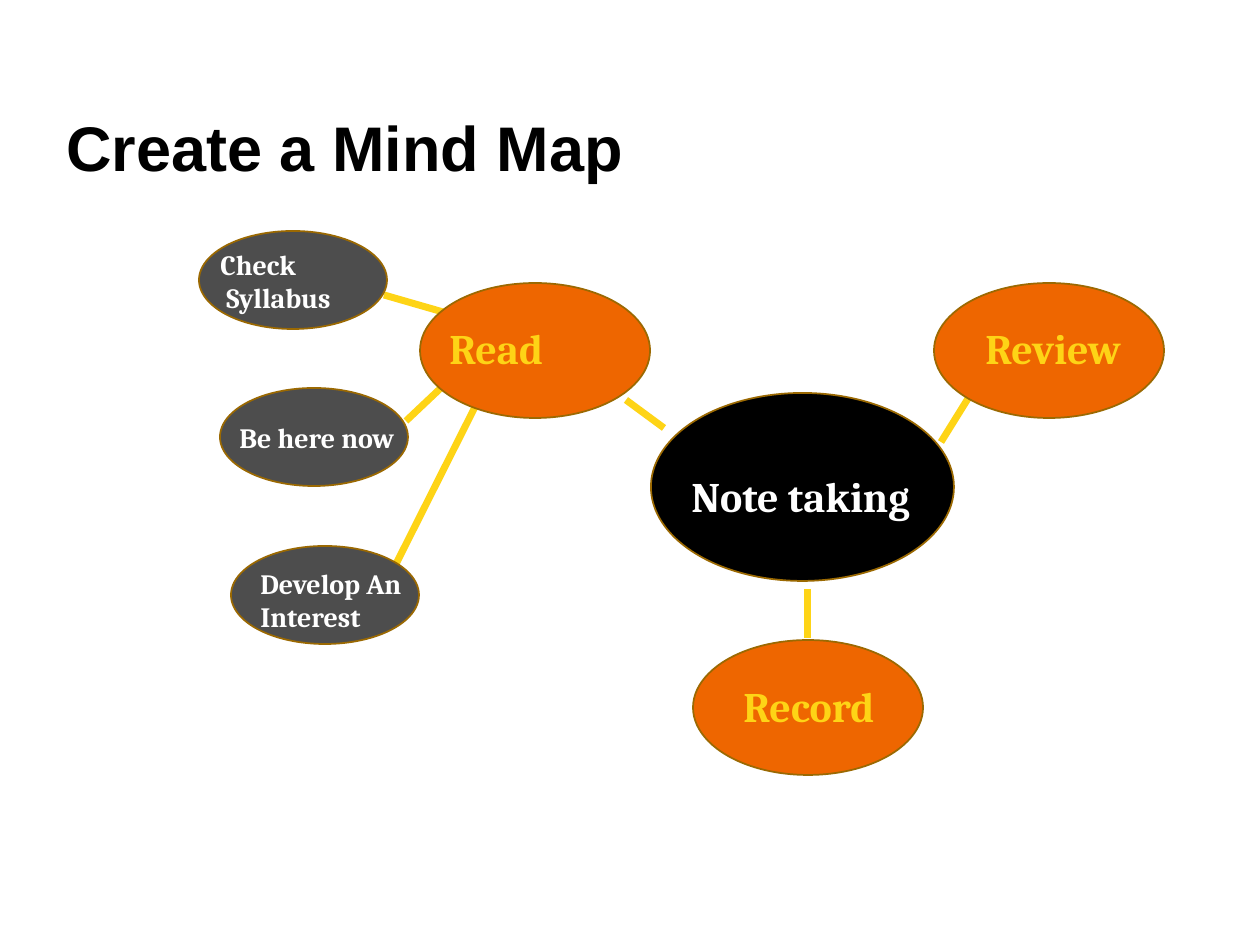
from dataclasses import dataclass

from lxml.etree import SubElement
from pptx import Presentation
from pptx.dml.color import RGBColor
from pptx.enum.shapes import MSO_CONNECTOR, MSO_SHAPE
from pptx.enum.text import MSO_ANCHOR, MSO_AUTO_SIZE
from pptx.oxml.ns import qn
from pptx.util import Emu, Pt

EMU_PER_PX = 914400 / 126
YELLOW, WHITE, BLACK = "FED416", "FFFFFF", "000000"
ORANGE, GRAY, BROWN = "EE6600", "4D4D4D", "9B6902"


@dataclass(frozen=True)
class Style:
    width: int
    height: int
    fill: str
    color: str
    size: int


@dataclass(frozen=True)
class Node:
    style: Style
    x: int
    y: int
    lines: tuple[str, ...]
    label: tuple[int, int, int, int]  # left, top, width, height


@dataclass(frozen=True)
class Link:
    x1: int
    y1: int
    x2: int
    y2: int


CENTER = Style(303, 188, BLACK, WHITE, 24)
BRANCH = Style(230, 135, ORANGE, YELLOW, 24)
LEAF = Style(188, 98, GRAY, WHITE, 16)

NODES = (
    Node(CENTER, 651, 393, ("Note taking",), (679, 464, 252, 63)),
    Node(BRANCH, 934, 283, ("Review",), (973, 316, 170, 63)),
    Node(BRANCH, 693, 640, ("Record",), (731, 674, 160, 63)),
    Node(BRANCH, 420, 283, ("Read",), (437, 316, 123, 63)),
    Node(LEAF, 199, 231, ("Check", " Syllabus"), (208, 241, 145, 81)),
    Node(LEAF, 220, 388, ("Be here now",), (227, 414, 184, 45)),
    Node(LEAF, 231, 546, ("Develop An", "Interest"), (248, 560, 180, 79)),
)

LINKS = (
    Link(394, 568, 475, 407),  # Develop An Interest - Read
    Link(406, 421, 443, 386),  # Be here now - Read
    Link(808, 589, 808, 638),  # Note taking - Record
    Link(941, 442, 969, 397),  # Note taking - Review
    Link(626, 400, 664, 428),  # Read - Note taking
    Link(384, 295, 443, 312),  # Check Syllabus - Read
)


def px(n: int) -> Emu:
    return Emu(round(n * EMU_PER_PX))


def rgb(color: str) -> RGBColor:
    return RGBColor.from_string(color)


def add_text(s, box: tuple[int, int, int, int], lines: tuple[str, ...],
             font: str, size: int, color: str):
    tf = s.shapes.add_textbox(*map(px, box)).text_frame
    tf.vertical_anchor = MSO_ANCHOR.TOP
    tf.word_wrap = False
    for i, line in enumerate(lines):
        p = tf.add_paragraph() if i else tf.paragraphs[0]
        r = p.add_run()
        r.text = line
        r.font.name = font
        r.font.size = Pt(size)
        r.font.bold = True
        r.font.color.rgb = rgb(color)
    return tf


def add_link(s, link: Link) -> None:
    line = s.shapes.add_connector(
        MSO_CONNECTOR.STRAIGHT,
        px(link.x1), px(link.y1), px(link.x2), px(link.y2))
    line.line.color.rgb = rgb(YELLOW)
    line.line.width = Pt(4)
    SubElement(line._element.spPr, qn("a:effectLst"))


def add_ellipse(s, node: Node) -> None:
    style = node.style
    sp = s.shapes.add_shape(MSO_SHAPE.OVAL, px(node.x), px(node.y),
                            px(style.width), px(style.height))
    sp.shadow.inherit = False
    sp.fill.solid()
    sp.fill.fore_color.rgb = rgb(style.fill)
    sp.line.color.rgb = rgb(BROWN)
    sp.line.width = Pt(1)


def add_label(s, node: Node) -> None:
    tf = add_text(s, node.label, node.lines, "Cambria",
                  node.style.size, node.style.color)
    tf.auto_size = MSO_AUTO_SIZE.SHAPE_TO_FIT_TEXT


def main() -> None:
    prs = Presentation()
    prs.slide_width, prs.slide_height = px(1260), px(945)
    s = prs.slides.add_slide(prs.slide_layouts[6])

    # Title
    tf = add_text(s, (54, 96, 1022, 71), ("Create a Mind Map",),
                  "Arial", 36, BLACK)
    tf.word_wrap = True
    tf.margin_top = px(13)

    # Mind map: links at the back, then ellipses, then labels
    for link in LINKS:
        add_link(s, link)
    for node in NODES:
        add_ellipse(s, node)
    for node in NODES:
        add_label(s, node)

    prs.save("out.pptx")


if __name__ == "__main__":
    main()
